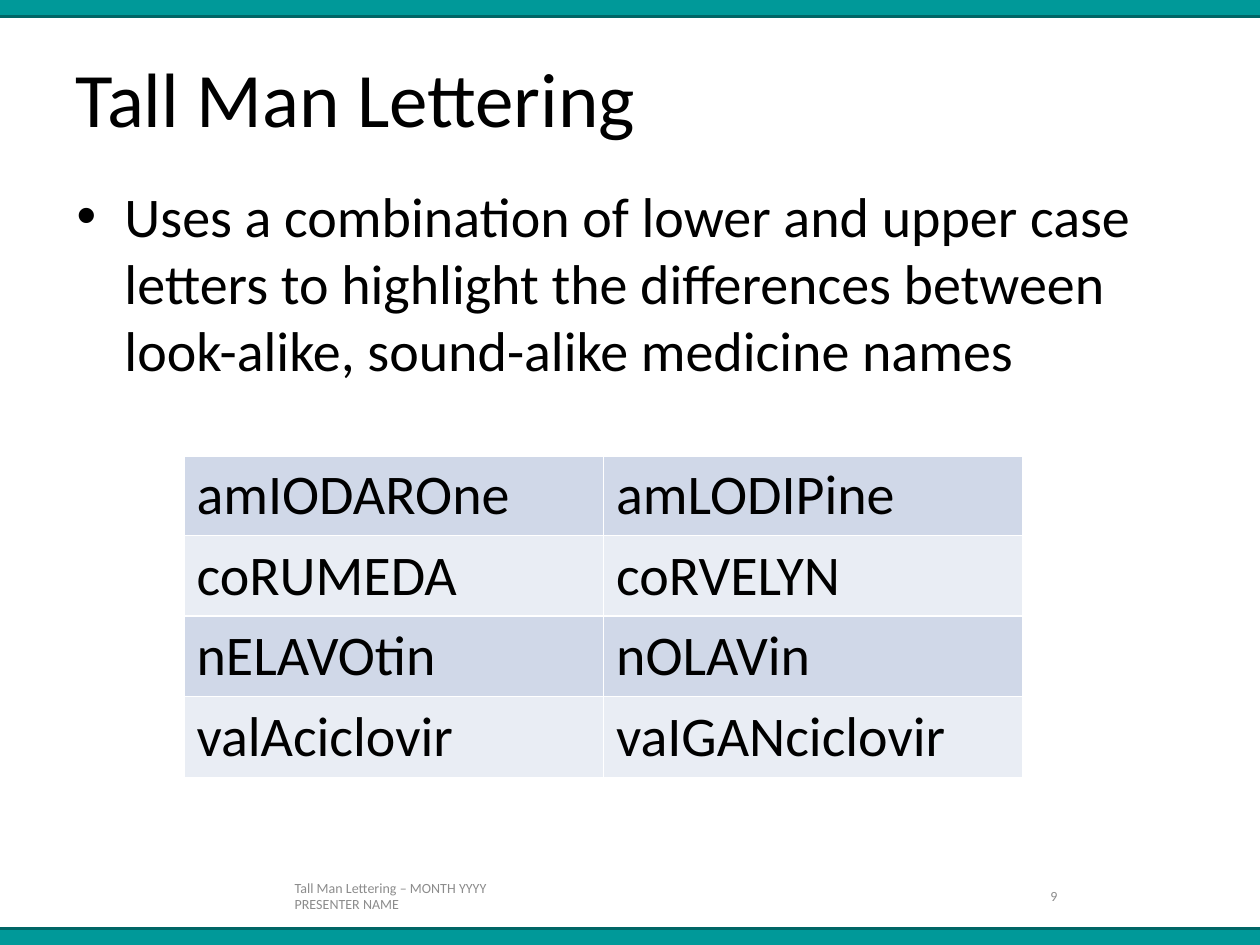
"""Builds the Tall Man Lettering slide with its table of look-alike names."""
from lxml import etree
from pptx import Presentation
from pptx.dml.color import RGBColor
from pptx.enum.shapes import MSO_CONNECTOR, MSO_SHAPE
from pptx.enum.text import MSO_ANCHOR, PP_ALIGN
from pptx.oxml.ns import qn
from pptx.util import Inches, Pt

STRAIGHT = MSO_CONNECTOR.STRAIGHT
RECTANGLE = MSO_SHAPE.RECTANGLE
TOP, MIDDLE = MSO_ANCHOR.TOP, MSO_ANCHOR.MIDDLE
LEFT, CENTER = PP_ALIGN.LEFT, PP_ALIGN.CENTER
TITLE_ONLY = 5
WIDTH, HEIGHT, BAND = 10, 7.5, 0.13
TEAL, DARK_TEAL = "009999", "006666"
BLACK, GREY, WHITE = "000000", "8C8C8C", "FFFFFF"
ROW_FILLS = ["D0D8E8", "E9EDF4"]
NAME_PAIRS = [
    ("amIODAROne", "amLODIPine"),
    ("coRUMEDA", "coRVELYN"),
    ("nELAVOtin", "nOLAVin"),
    ("valAciclovir", "vaIGANciclovir"),
]


def color(value):
    return RGBColor.from_string(value)


def write(frame, text, size=32, ink=BLACK, align=LEFT, anchor=TOP, bullet=None, indent=0.38):
    """Fills a text frame, one paragraph per line of text."""
    frame.word_wrap = True
    frame.vertical_anchor = anchor
    for index, line in enumerate(text.split("\n")):
        para = frame.add_paragraph() if index else frame.paragraphs[0]
        if bullet:
            props = para._p.get_or_add_pPr()
            props.set("marL", str(Inches(indent)))
            props.set("indent", str(-Inches(indent)))
            etree.SubElement(props, qn("a:buFont")).set("typeface", "Arial")
            etree.SubElement(props, qn("a:buChar")).set("char", bullet)
        para.alignment = align
        span = para.add_run()
        span.text = line
        span.font.name = "Calibri"
        span.font.size = Pt(size)
        span.font.color.rgb = color(ink)


def set_border(cell, side, ink, width):
    """Draws one side of a table cell; side is L, R, T or B."""
    props = cell._tc.get_or_add_tcPr()
    line = etree.SubElement(props, qn("a:ln" + side), w=str(Pt(width)))
    fill = etree.SubElement(line, qn("a:solidFill"))
    etree.SubElement(fill, qn("a:srgbClr"), val=ink)


class SlideBuilder:
    """Holds the current page and adds styled elements to it."""

    def __init__(self, page):
        self.page = page

    def title(self, text, left, top, width, height):
        box = self.page.shapes.title
        box.left, box.top = Inches(left), Inches(top)
        box.width, box.height = Inches(width), Inches(height)
        write(box.text_frame, text, size=44, anchor=MIDDLE)

    def text(self, text, left, top, width, height, **style):
        box = self.page.shapes.add_textbox(
            Inches(left), Inches(top), Inches(width), Inches(height))
        write(box.text_frame, text, **style)

    def band(self, top):
        shape = self.page.shapes.add_shape(
            RECTANGLE, 0, Inches(top), Inches(WIDTH), Inches(BAND))
        shape.shadow.inherit = False
        shape.fill.solid()
        shape.fill.fore_color.rgb = color(TEAL)
        shape.line.fill.background()

    def rule(self, top):
        line = self.page.shapes.add_connector(
            STRAIGHT, 0, Inches(top), Inches(WIDTH), Inches(top))
        line.line.color.rgb = color(DARK_TEAL)
        line.line.width = Pt(2)
        etree.SubElement(line._element.spPr, qn("a:effectLst"))

    def table(self, pairs, left, top, column_width, header_height, row_height):
        rows = [("", "")] + pairs
        table = self.page.shapes.add_table(
            len(rows), 2, Inches(left), Inches(top), Inches(2 * column_width),
            Inches(header_height + row_height * len(pairs))).table
        for column in table.columns:
            column.width = Inches(column_width)
        for index, names in enumerate(rows):
            table.rows[index].height = Inches(row_height if index else header_height)
            for cell, name in zip(table.rows[index].cells, names):
                for side in "LRTB":
                    heavy = (index, side) in [(0, "B"), (1, "T")]
                    set_border(cell, side, WHITE, 3 if heavy else 1)
                cell.fill.solid()
                cell.fill.fore_color.rgb = color(ROW_FILLS[(index - 1) % 2] if index else WHITE)
                if name:
                    write(cell.text_frame, name)


def main():
    deck = Presentation()
    deck.slide_width, deck.slide_height = Inches(WIDTH), Inches(HEIGHT)
    builder = SlideBuilder(deck.slides.add_slide(deck.slide_layouts[TITLE_ONLY]))
    for top in (0, HEIGHT - BAND):
        builder.band(top)
    for top in (HEIGHT - BAND, BAND):
        builder.rule(top)
    builder.text("Tall Man Lettering – MONTH YYYY\nPRESENTER NAME",
                 2.24, 6.91, 3.17, 0.4, size=8, ink=GREY, anchor=MIDDLE)
    builder.title("Tall Man Lettering", 0.5, 0.3, 9, 0.93)
    builder.text("Uses a combination of lower and upper case letters to highlight "
                 "the differences between look-alike, sound-alike medicine names",
                 0.51, 1.39, 9, 1.97, bullet="•")
    builder.text("9", 7.2, 6.91, 2.33, 0.4, size=8, ink=GREY, align=CENTER, anchor=MIDDLE)
    builder.table(NAME_PAIRS, 1.46, 3.2, 3.33, header_height=0.41, row_height=0.64)
    deck.save("out.pptx")


if __name__ == "__main__":
    main()
